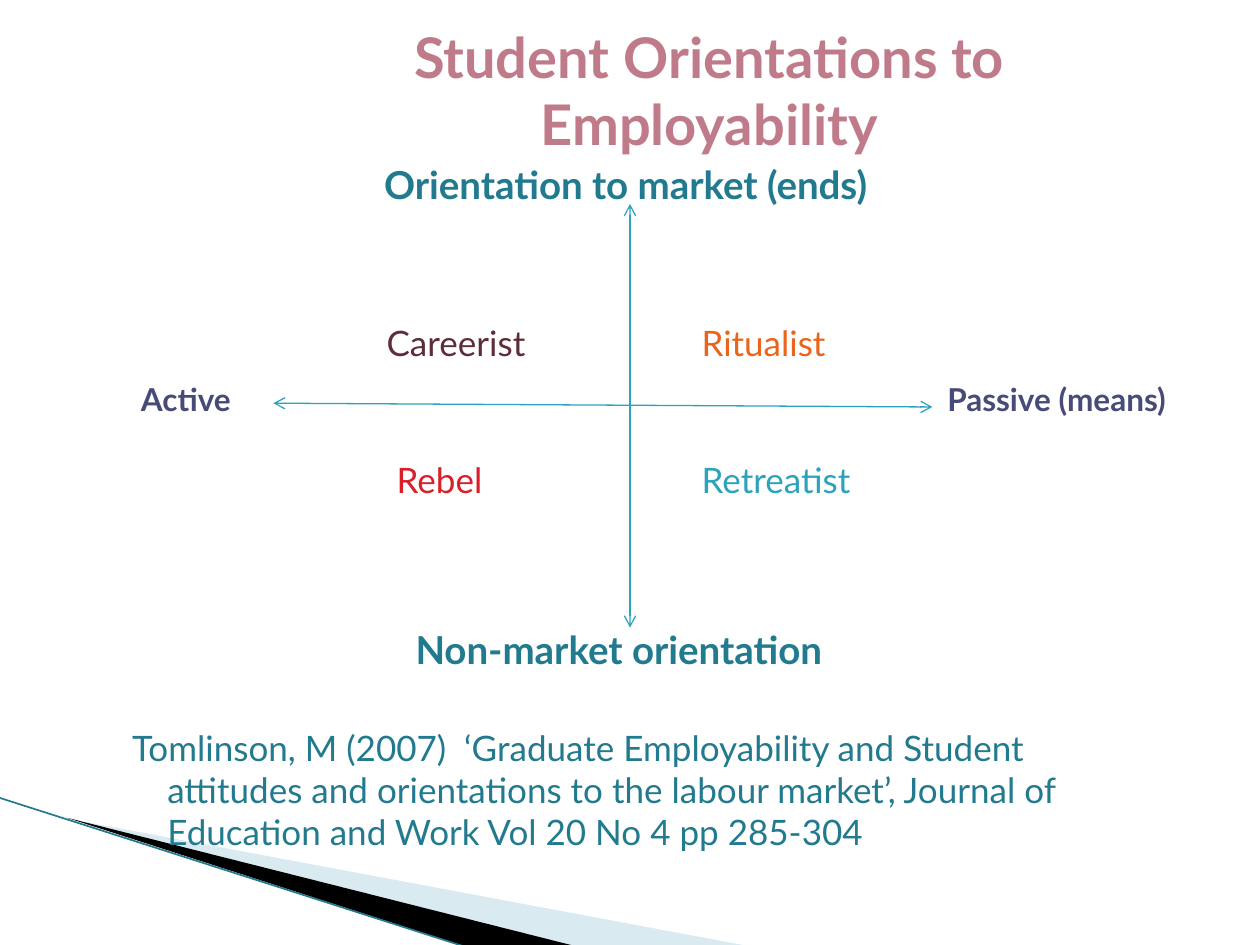
from lxml.etree import SubElement
from pptx import Presentation
from pptx.dml.color import RGBColor
from pptx.enum.shapes import MSO_CONNECTOR as Connector
from pptx.enum.text import MSO_AUTO_SIZE as AutoSize, PP_ALIGN as Align
from pptx.oxml.ns import qn
from pptx.util import Inches, Pt

TEAL, SKY, INDIGO = "227A8F", "2DA2BF", "474B78"
CITATION = (
    "Tomlinson, M (2007)  ‘Graduate Employability and Student attitudes and "
    "orientations to the labour market’, Journal of Education and Work "
    "Vol 20 No 4 pp 285-304"
)


def rgb(code):
    """Turn a hex string into a colour."""
    return RGBColor.from_string(code)


def add_text(page, text, place, size, color, bold=False, align=Align.LEFT):
    """Add a wrapped text box and return its paragraph."""
    box = page.shapes.add_textbox(*map(Inches, place))
    frame = box.text_frame
    for name, value in {"word_wrap": True, "auto_size": AutoSize.NONE}.items():
        setattr(frame, name, value)
    para = frame.paragraphs[0]
    para.alignment = align
    span = para.add_run()
    span.text = text
    for name, value in {"name": "Lato", "size": Pt(size), "bold": bold}.items():
        setattr(span.font, name, value)
    span.font.color.rgb = rgb(color)
    return para


def add_line(page, start, end, color, width, arrows=False):
    """Add a straight line, with arrowheads at both ends if asked."""
    line = page.shapes.add_connector(
        Connector.STRAIGHT, *map(Inches, (*start, *end))
    )
    line.line.color.rgb = rgb(color)
    line.line.width = Pt(width)
    if arrows:
        outline = line.line._get_or_add_ln()
        for end_tag in ("a:headEnd", "a:tailEnd"):
            SubElement(outline, qn(end_tag), type="arrow")
    SubElement(line._element.spPr, qn("a:effectLst"))


def add_wedge(page, points, color, opacity=100):
    """Add a filled polygon without an outline."""
    start, *others = [(Inches(x), Inches(y)) for x, y in points]
    builder = page.shapes.build_freeform(*start)
    builder.add_line_segments(others, close=True)
    wedge = builder.convert_to_shape()
    wedge.shadow.inherit = False
    wedge.line.fill.background()
    wedge.fill.solid()
    wedge.fill.fore_color.rgb = rgb(color)
    if opacity < 100:
        tint = wedge._element.spPr.find(".//" + qn("a:srgbClr"))
        SubElement(tint, qn("a:alpha"), val=str(opacity * 1000))


def add_corner(page):
    """Draw the swoosh in the bottom left corner."""
    add_wedge(page, [(0.55, 6.5), (5.95, 7.51), (4.56, 7.51)], "A0CBDC", 40)
    add_wedge(page, [(0.53, 6.49), (4.57, 7.51), (3.72, 7.52)], "000000")
    add_line(page, (-0.01, 6.33), (3.71, 7.52), TEAL, 0.95)


def add_axes(page):
    """Draw both axes and name their ends."""
    add_line(page, (5, 1.62), (5, 4.98), SKY, 0.75, arrows=True)
    add_line(page, (2.17, 3.2), (7.4, 3.23), SKY, 0.75, arrows=True)
    for text, place, size, color in (
        ("Orientation to market (ends)", (2.95, 1.23, 4.53, 0.47), 22, TEAL),
        ("Non-market orientation", (3.2, 4.92, 4.06, 0.47), 22, TEAL),
        ("Active", (1.02, 2.97, 1.09, 0.4), 18, INDIGO),
        ("Passive (means)", (7.42, 2.97, 2.19, 0.4), 18, INDIGO),
    ):
        add_text(page, text, place, size, color, bold=True)


def add_quadrants(page):
    """Name the four student orientations."""
    upper, lower, right = 2.5, 3.59, 5.47
    for text, left, top, width, color in (
        ("Careerist", 2.97, upper, 1.56, "5E2D37"),
        ("Ritualist", right, upper, 1.33, "EB641B"),
        ("Rebel", 3.05, lower, 1.64, "DA1F28"),
        ("Retreatist", right, lower, 1.56, SKY),
    ):
        add_text(page, text, (left, top, width, 0.44), 20, color)


def add_citation(page):
    """Add the reference with a hanging indent."""
    para = add_text(page, CITATION, (0.83, 5.72, 8.44, 1.17), 20, TEAL)
    settings = para._p.get_or_add_pPr()
    for name, value in {"marL": 0.4, "indent": -0.28}.items():
        settings.set(name, str(Inches(value)))


def main():
    """Build the slide and save it."""
    deck = Presentation()
    deck.slide_width, deck.slide_height = Inches(10), Inches(7.5)
    page = deck.slides.add_slide(deck.slide_layouts[6])
    add_corner(page)
    add_axes(page)
    add_quadrants(page)
    add_citation(page)
    add_text(page, "Student Orientations to Employability",
             (1.93, 0.13, 7.4, 1.18), 32, "C07B8A", True, Align.CENTER)
    deck.save("out.pptx")


if __name__ == "__main__":
    main()
